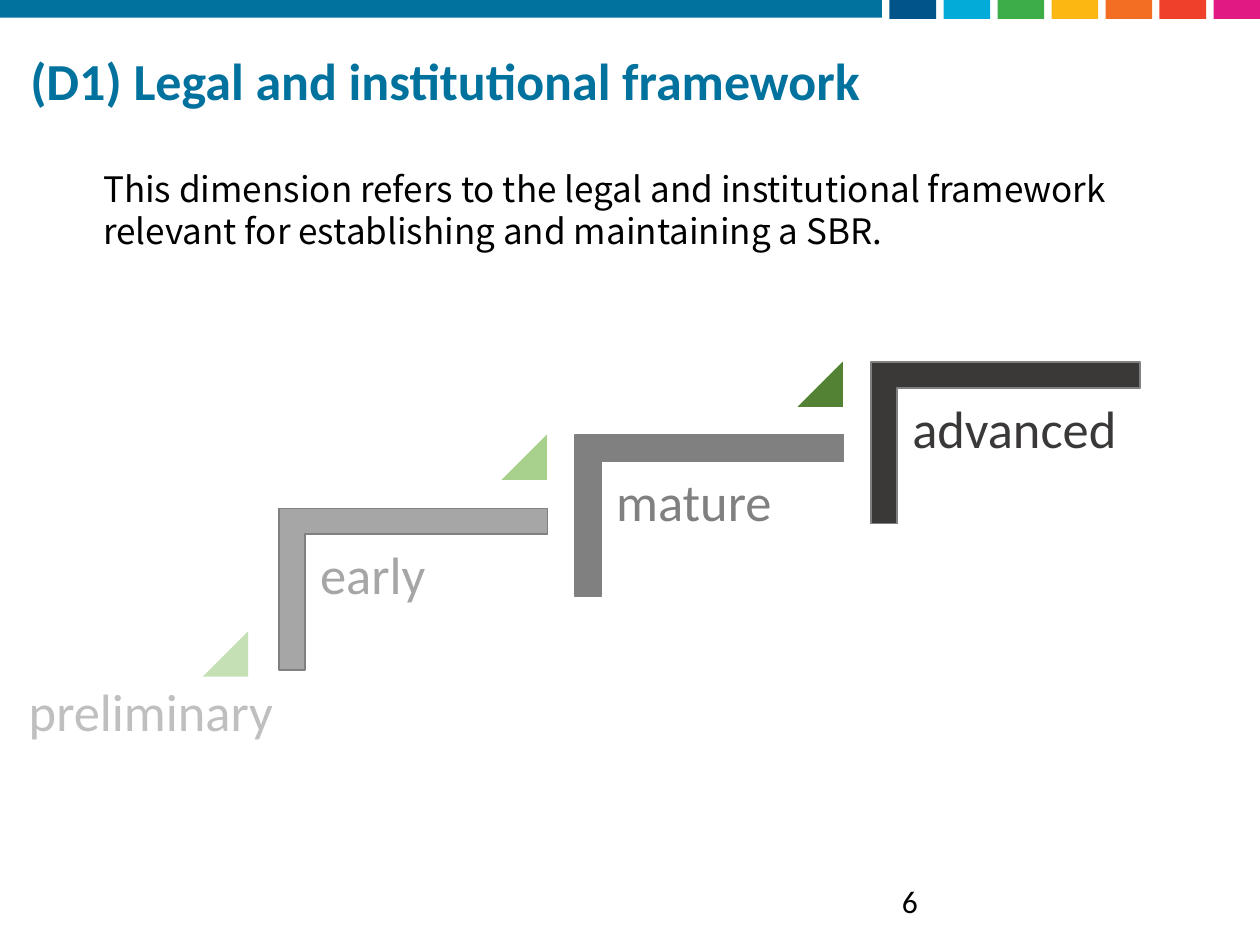
"""Build the slide on the legal and institutional framework dimension."""
import pptx
import pptx.util
import pptx.dml.color
import pptx.enum.shapes
import pptx.enum.text

Inches = pptx.util.Inches
Pt = pptx.util.Pt
RGBColor = pptx.dml.color.RGBColor
MSO_SHAPE = pptx.enum.shapes.MSO_SHAPE
ANCHOR = pptx.enum.text.MSO_ANCHOR
ALIGN = pptx.enum.text.PP_ALIGN

BLUE = RGBColor(0x01, 0x71, 0x9D)
BLACK = RGBColor(0, 0, 0)
GREY = RGBColor(0x80, 0x80, 0x80)
LIGHT_GREY = RGBColor(0xA6, 0xA6, 0xA6)
PALE_GREY = RGBColor(0xBF, 0xBF, 0xBF)
CHARCOAL = RGBColor(0x3B, 0x38, 0x38)
PALE_GREEN = RGBColor(0xC5, 0xE0, 0xB4)
LIGHT_GREEN = RGBColor(0xA9, 0xD1, 0x8E)
GREEN = RGBColor(0x54, 0x82, 0x35)

TITLE = "(D1) Legal and institutional framework"
BODY = ("This dimension refers to the legal and institutional framework "
        "relevant for establishing and maintaining a SBR.")
TILES = [RGBColor(0x00, 0x54, 0x89), RGBColor(0x03, 0xAC, 0xD8),
         RGBColor(0x3D, 0xAD, 0x48), RGBColor(0xFD, 0xB7, 0x13),
         RGBColor(0xF3, 0x6D, 0x22), RGBColor(0xEF, 0x41, 0x2A),
         RGBColor(0xE0, 0x19, 0x83)]
STEPS = [("early", LIGHT_GREY), ("mature", GREY), ("advanced", CHARCOAL)]
TRIANGLES = [(1.61, 5.01, PALE_GREEN), (3.98, 3.45, LIGHT_GREEN),
             (6.33, 2.87, GREEN)]
STEP_X, STEP_Y = 2.35, -0.58


def add_shape(slide, kind, box, fill, line=None):
    sp = slide.shapes.add_shape(kind, *map(Inches, box))
    sp.shadow.inherit = False
    sp.fill.solid()
    sp.fill.fore_color.rgb = fill
    if line is None:
        sp.line.fill.background()
    else:
        sp.line.color.rgb = line
        sp.line.width = Pt(1)
    return sp


def write(sp, text, size, color, font="Calibri", bold=False, spacing=None,
          inset=None, anchor=ANCHOR.TOP):
    tf = sp.text_frame
    tf.word_wrap = True
    tf.auto_size = pptx.enum.text.MSO_AUTO_SIZE.NONE
    tf.vertical_anchor = anchor
    if inset is not None:
        tf.margin_left = tf.margin_right = Inches(inset)
        tf.margin_top = tf.margin_bottom = Inches(inset)
    p = tf.paragraphs[0]
    p.alignment = ALIGN.LEFT
    if spacing:
        p.line_spacing = spacing
    r = p.add_run()
    r.text = text
    r.font.name, r.font.size, r.font.bold = font, Pt(size), bold
    r.font.color.rgb = color


def add_text(slide, box, text, size, color, **fmt):
    write(slide.shapes.add_textbox(*map(Inches, box)), text, size, color, **fmt)


def main():
    prs = pptx.Presentation()
    prs.slide_width, prs.slide_height = Inches(10), Inches(7.5)
    slide = prs.slides.add_slide(prs.slide_layouts[5])

    add_shape(slide, MSO_SHAPE.RECTANGLE, (0, 0, 7, 0.14), BLUE)
    for i, color in enumerate(TILES):
        add_shape(slide, MSO_SHAPE.RECTANGLE,
                  (7.06 + i * 3 / 7, 0, 0.37, 0.15), color)

    title = slide.shapes.title
    title.left, title.top = Inches(0.14), Inches(0.33)
    title.width, title.height = Inches(7.23), Inches(0.66)
    write(title, TITLE, 29.7, BLUE, bold=True, spacing=0.9,
          anchor=ANCHOR.MIDDLE)
    add_text(slide, (0.72, 1.28, 8.34, 0.77), BODY, 20, BLACK,
             font="Noto Sans CJK JP")

    for i, (label, color) in enumerate(STEPS):
        dx, dy = i * STEP_X, i * STEP_Y
        sp = add_shape(slide, MSO_SHAPE.CORNER,
                       (2.64 + dx, 3.61 + dy, 1.28, 2.13), color, GREY)
        sp.rotation = 90
        sp.adjustments[0] = sp.adjustments[1] = 0.16
        add_text(slide, (2.42 + dx, 4.24 + dy, 1.92, 1.68), label, 30, color,
                 spacing=0.9, inset=0.12)
    for left, top, color in TRIANGLES:
        sp = add_shape(slide, MSO_SHAPE.ISOSCELES_TRIANGLE,
                       (left, top, 0.36, 0.36), color)
        sp.adjustments[0] = 1

    add_text(slide, (0.13, 5.34, 2.54, 0.61), "preliminary", 30, PALE_GREY)
    add_text(slide, (7.06, 6.95, 2.25, 0.4), "6", 18, BLACK)
    prs.save("out.pptx")


if __name__ == "__main__":
    main()
